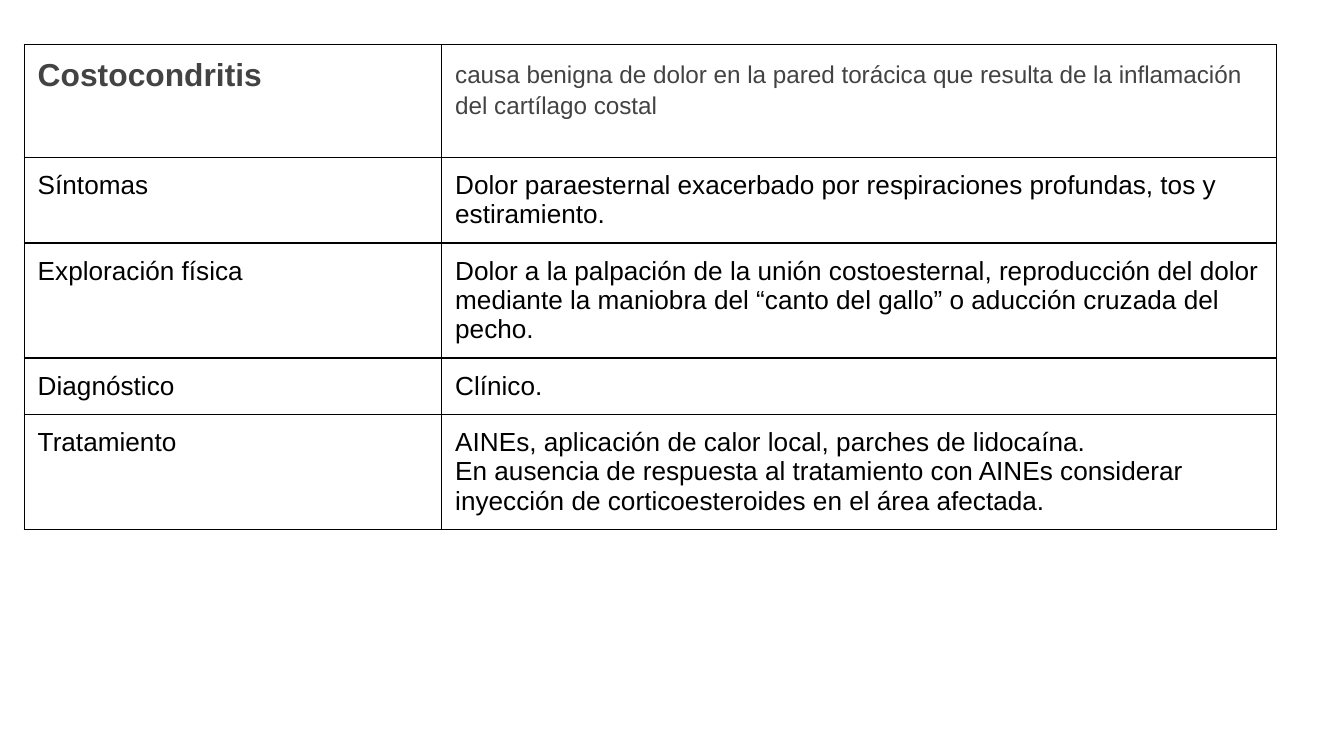
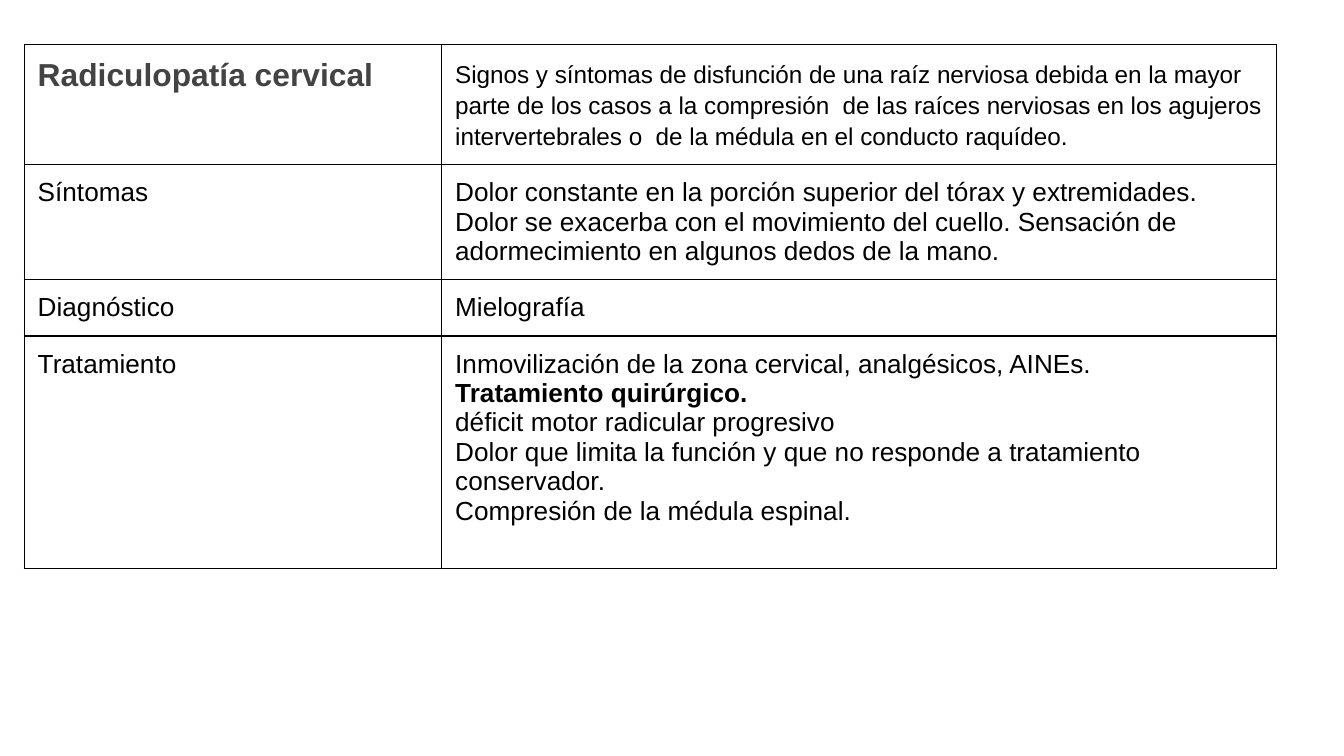
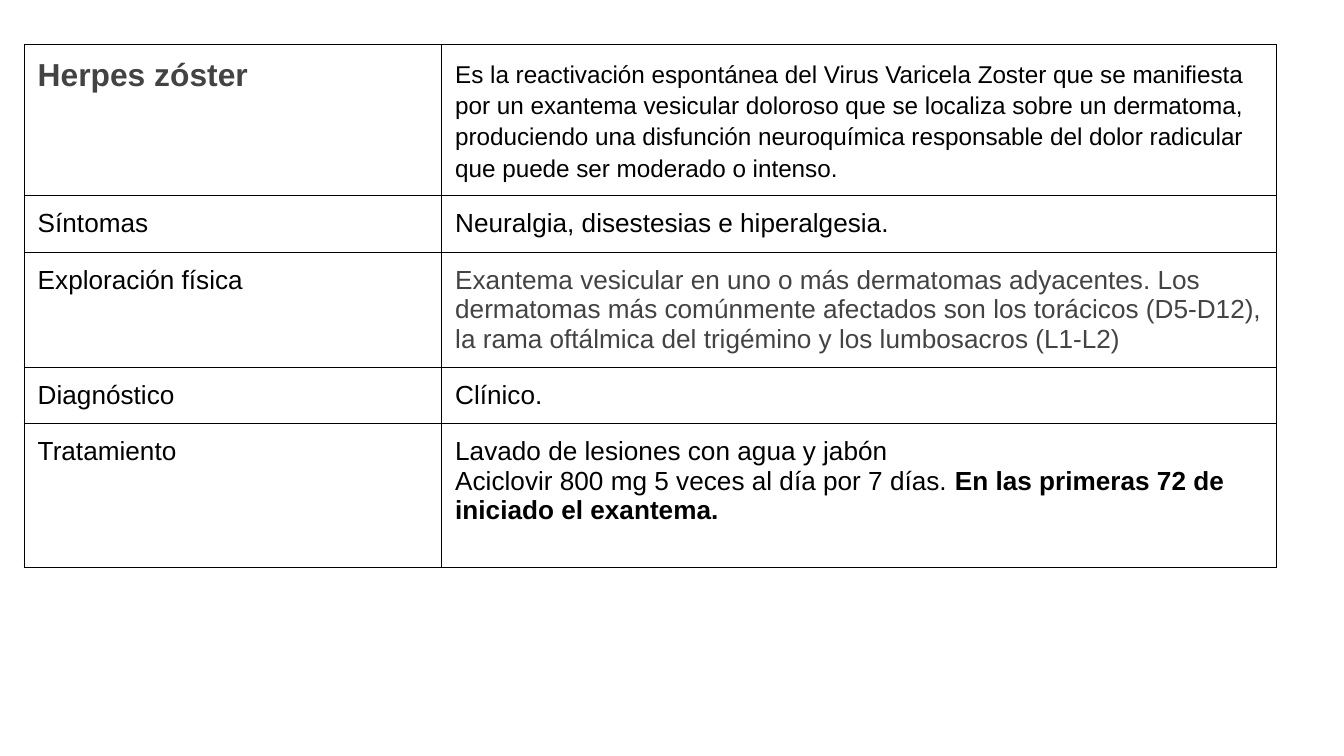
from dataclasses import dataclass

from lxml.etree import SubElement
from pptx import Presentation
from pptx.dml.color import RGBColor as RGB
from pptx.oxml.ns import qn
from pptx.util import Pt


@dataclass(frozen=True)
class Theme:
    """Hold the colours, type sizes and table measures."""
    font: str = "Arial"
    black: str = "000000"
    grey: str = "434343"
    name_size: float = 17
    summary_size: float = 13
    body_size: float = 14
    summary_spacing: float = 1.15
    margin: float = 7.2
    border: float = 0.75
    head_row: float = 60.5
    body_row: float = 30.24
    blank_line: float = 15.7


T = Theme()
SLIDE = (720, 405)
LEFT, TOP, WIDTH = 13, 23.76, 671.04
COLS = 3

DISEASES = [
    {
        "name": "Costocondritis",
        "summary": "causa benigna de dolor en la pared torácica que resulta de la inflamación del cartílago costal",
        "summary_color": T.grey,
        "height": 269.3,
        "rows": [
            ("Síntomas", "Dolor paraesternal exacerbado por respiraciones profundas, tos y estiramiento.", T.black),
            ("Exploración física", "Dolor a la palpación de la unión costoesternal, reproducción del dolor mediante la "
             "maniobra del “canto del gallo” o aducción cruzada del pecho.", T.black),
            ("Diagnóstico", "Clínico.", T.black),
        ],
        "treatment": [
            [("AINEs, aplicación de calor local, parches de lidocaína.", False)],
            [("En ausencia de respuesta al tratamiento con AINEs considerar inyección de corticoesteroides "
              "en el área afectada.", False)],
        ],
        "room_below": 0,
    },
    {
        "name": "Radiculopatía cervical",
        "summary": "Signos y síntomas de disfunción de una raíz nerviosa debida en la mayor parte de los casos a la "
                   "compresión  de las raíces nerviosas en los agujeros intervertebrales o  de la médula en el "
                   "conducto raquídeo.",
        "summary_color": T.black,
        "height": 294.5,
        "rows": [
            ("Síntomas", "Dolor constante en la porción superior del tórax y extremidades. Dolor se exacerba con el "
             "movimiento del cuello. Sensación de adormecimiento en algunos dedos de la mano.", T.black),
            ("Diagnóstico", "Mielografía", T.black),
        ],
        "treatment": [
            [("Inmovilización de la zona cervical, analgésicos, AINEs.", False)],
            [("Tratamiento quirúrgico.", True)],
            [("déficit motor radicular progresivo", False)],
            [("Dolor que limita la función y que no responde a tratamiento conservador.", False)],
            [("Compresión de la médula espinal.", False)],
        ],
        "room_below": T.blank_line,
    },
    {
        "name": "Herpes zóster",
        "summary": "Es la reactivación espontánea del Virus Varicela Zoster que se manifiesta por un exantema "
                   "vesicular doloroso que se localiza sobre un dermatoma, produciendo una disfunción neuroquímica "
                   "responsable del dolor radicular que puede ser moderado o intenso.",
        "summary_color": T.black,
        "height": 293.8,
        "rows": [
            ("Síntomas", "Neuralgia, disestesias e hiperalgesia.", T.black),
            ("Exploración física", "Exantema vesicular en uno o más dermatomas adyacentes. Los dermatomas más "
             "comúnmente afectados son los torácicos (D5-D12), la rama oftálmica del trigémino y los lumbosacros "
             "(L1-L2)", T.grey),
            ("Diagnóstico", "Clínico.", T.black),
        ],
        "treatment": [
            [("Lavado de lesiones con agua y jabón", False)],
            [("Aciclovir 800 mg 5 veces al día por 7 días. ", False),
             ("En las primeras 72 de iniciado el exantema.", True)],
        ],
        "room_below": T.blank_line,
    },
]


def style_cell(cell):
    """Give a cell even margins, no fill and a black border."""
    cell.margin_left = cell.margin_right = cell.margin_top = cell.margin_bottom = Pt(T.margin)
    pr = cell._tc.get_or_add_tcPr()
    for side in ("a:lnL", "a:lnR", "a:lnT", "a:lnB"):
        ln = SubElement(pr, qn(side), w=str(Pt(T.border)))
        fill = SubElement(ln, qn("a:solidFill"))
        SubElement(fill, qn("a:srgbClr"), val=T.black)
    cell.fill.background()


def write(cell, paragraphs, size=T.body_size, color=T.black, spacing=None):
    """Write paragraphs of (text, bold) runs into a cell."""
    tf = cell.text_frame
    for i, runs in enumerate(paragraphs):
        p = tf.paragraphs[0] if i == 0 else tf.add_paragraph()
        if spacing:
            p.line_spacing = spacing
        for text, bold in runs:
            r = p.add_run()
            r.text = text
            r.font.name, r.font.size, r.font.bold = T.font, Pt(size), bold
            r.font.color.rgb = RGB.from_string(color)


def add_disease_table(s, disease, left, top, width):
    """Place the fact table of one disease."""
    last = len(disease["rows"]) + 1
    frame = s.shapes.add_table(last + 2, COLS, Pt(left), Pt(top), Pt(width), Pt(disease["height"]))
    table = frame.table
    table.first_row = table.horz_banding = False
    for col in table.columns:
        col.width = Pt(width / COLS)
    for i, row in enumerate(table.rows):
        row.height = Pt(T.body_row if i else T.head_row)
    frame.height = Pt(disease["height"])
    for cell in table.iter_cells():
        style_cell(cell)
    for i in range(last):
        table.cell(i, 1).merge(table.cell(i, 2))
    table.cell(last, 0).merge(table.cell(last + 1, 0))
    table.cell(last, 1).merge(table.cell(last + 1, 2))

    write(table.cell(0, 0), [[(disease["name"], True)]], T.name_size, T.grey)
    write(table.cell(0, 1), [[(disease["summary"], False)]], T.summary_size,
          disease["summary_color"], T.summary_spacing)
    for i, (label, text, color) in enumerate(disease["rows"], 1):
        write(table.cell(i, 0), [[(label, False)]])
        write(table.cell(i, 1), [[(text, False)]], color=color)
    write(table.cell(last, 0), [[("Tratamiento", False)]])
    write(table.cell(last, 1), disease["treatment"])
    table.cell(last, 1).margin_bottom = Pt(T.margin + disease["room_below"])


def main():
    """Build one slide for each disease and save the deck."""
    prs = Presentation()
    prs.slide_width, prs.slide_height = map(Pt, SLIDE)
    for disease in DISEASES:
        s = prs.slides.add_slide(prs.slide_layouts[6])
        add_disease_table(s, disease, LEFT, TOP, WIDTH)
    prs.save("out.pptx")


if __name__ == "__main__":
    main()
